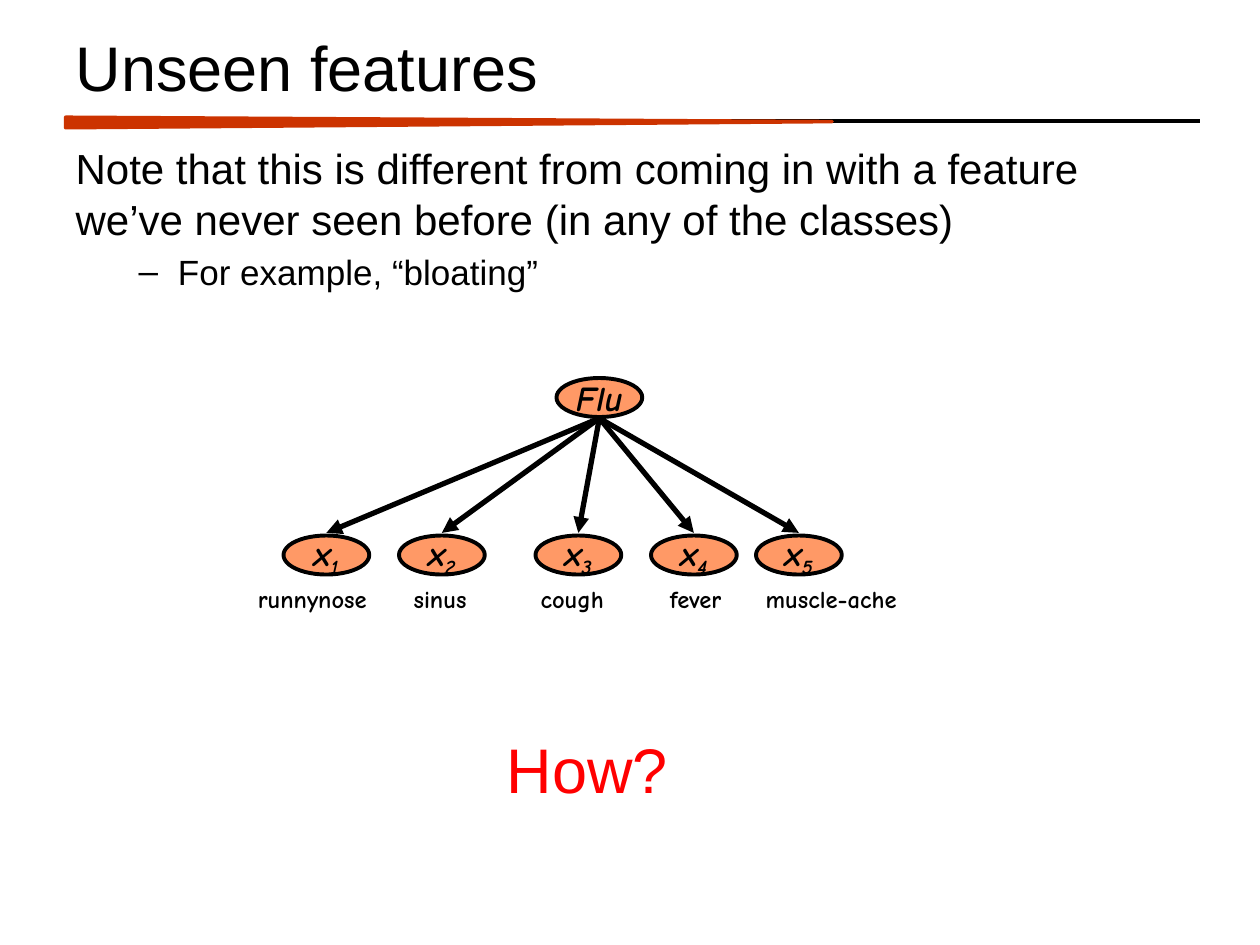
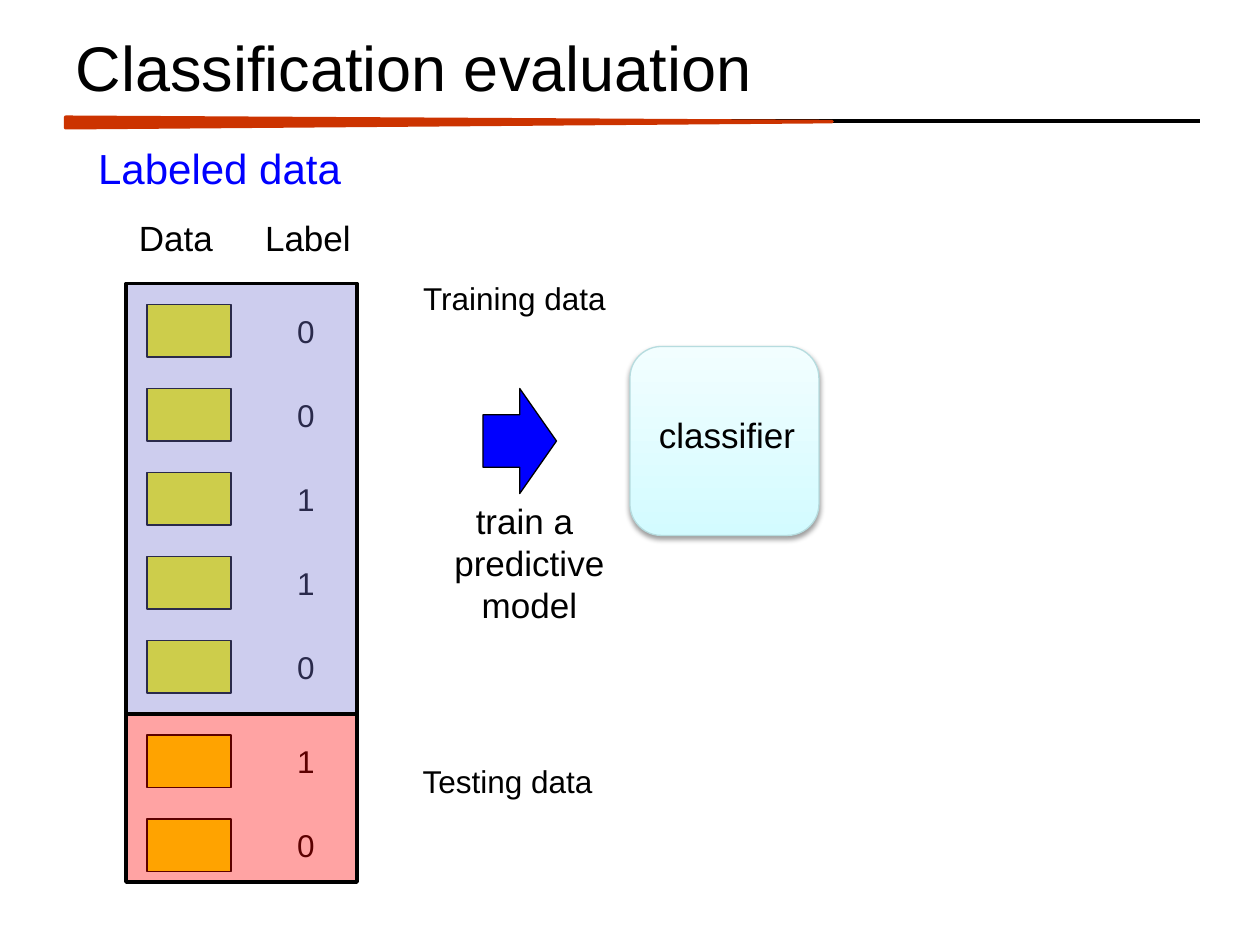
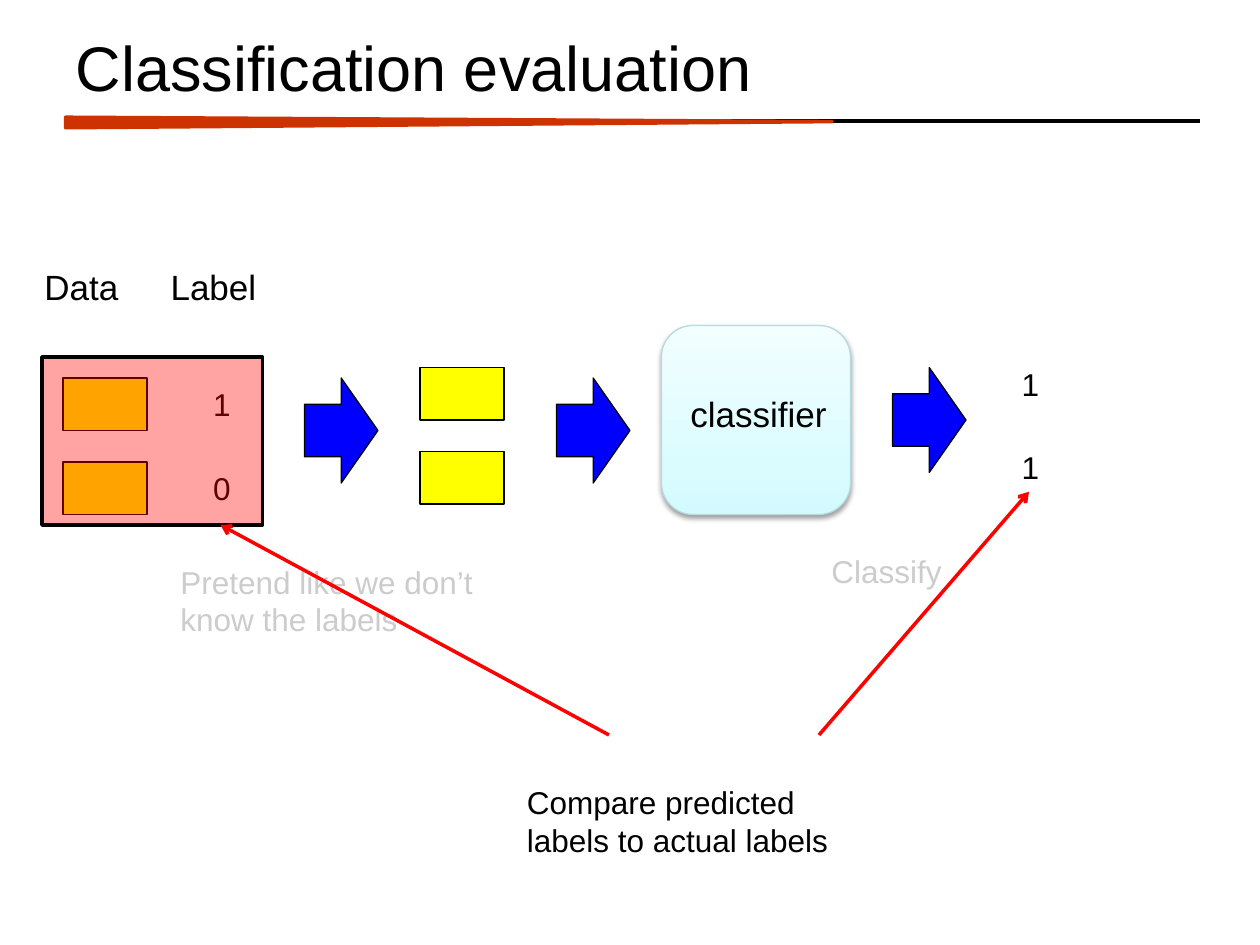
from lxml import etree
from pptx import Presentation
from pptx import util as u
from pptx.dml.color import RGBColor
from pptx.enum import shapes, text
from pptx.oxml.ns import qn

BLACK, RED, BLUE, YELLOW = "000000", "FF0000", "0000FF", "FFFF00"
RUST, ORANGE, LAVENDER, GREY = "CC3300", "FF9966", "7575D1", "CCCCCC"
ROW_STEP = 48
TITLE_AND_BODY, TITLE_ONLY = 1, 5


def rgb(color):
    return RGBColor.from_string(color)


def points(*values):
    return [u.Pt(value) for value in values]


class Deck:
    """Holds the presentation, its style and the slide being drawn."""

    body_font = "Arial"
    graph_font = "Comic Neue"

    def __init__(self):
        self.prs = Presentation()
        self.prs.slide_width, self.prs.slide_height = points(720, 540)
        self.slide = None

    def start(self, heading, layout=TITLE_ONLY):
        """Add a slide with its title and the tapering rule below it."""
        self.slide = self.prs.slides.add_slide(self.prs.slide_layouts[layout])
        self.line((37.5, 69), (685.5, 69), BLACK, 2)
        taper = self.shape("ISOSCELES_TRIANGLE", (253.5, -149, 6, 438), RUST, RUST, 2)
        taper.rotation = 90
        taper.adjustments[0] = 0.417
        title = self.slide.shapes.title
        self.place(title, (36, 12, 648, 52))
        title.text_frame.text = heading
        title.text_frame.vertical_anchor = text.MSO_ANCHOR.MIDDLE
        self.style(title.text_frame.paragraphs[0], 36, align="LEFT")

    def place(self, shape, box):
        shape.left, shape.top, shape.width, shape.height = points(*box)

    def style(self, paragraph, size, color=BLACK, font=body_font, align=None, bold=None, italic=None):
        paragraph.font.size = u.Pt(size)
        paragraph.font.name = font
        paragraph.font.color.rgb = rgb(color)
        paragraph.font.bold, paragraph.font.italic = bold, italic
        if align:
            paragraph.alignment = text.PP_ALIGN[align]

    def body(self, box, statement, example):
        """Fill the body with a plain statement and one dashed example."""
        body = self.slide.placeholders[1]
        self.place(body, box)
        frame = body.text_frame
        frame.auto_size = text.MSO_AUTO_SIZE.NONE
        frame.text = statement
        first, second = frame.paragraphs[0], frame.add_paragraph()
        second.text, second.level = example, 1
        self.style(first, 24)
        self.style(second, 20)
        props = first._p.get_or_add_pPr()
        props.set("marL", "0")
        props.set("indent", "0")
        etree.SubElement(props, qn("a:buNone"))

    def label(self, box, words, size=18, color=BLACK, wrap=False, **font):
        frame = self.slide.shapes.add_textbox(*points(*box)).text_frame
        frame.text = words
        frame.word_wrap = wrap
        for paragraph in frame.paragraphs:
            self.style(paragraph, size, color, align="LEFT" if wrap else "CENTER", **font)

    def shape(self, kind, box, fill, line=BLACK, width=0.75, alpha=None):
        shape = self.slide.shapes.add_shape(shapes.MSO_SHAPE[kind], *points(*box))
        shape.shadow.inherit = False
        shape.fill.solid()
        shape.fill.fore_color.rgb = rgb(fill)
        shape.line.color.rgb = rgb(line)
        shape.line.width = u.Pt(width)
        if alpha:
            tint = shape.element.spPr.find(f"{qn('a:solidFill')}/{qn('a:srgbClr')}")
            etree.SubElement(tint, qn("a:alpha"), val=str(alpha * 1000))
        return shape

    def line(self, start, end, color, width, head=None):
        line = self.slide.shapes.add_connector(
            shapes.MSO_CONNECTOR.STRAIGHT, *points(*start, *end))
        line.line.color.rgb = rgb(color)
        line.line.width = u.Pt(width)
        props = line.element.spPr
        if head:
            etree.SubElement(props.find(qn("a:ln")), qn("a:tailEnd"), type=head)
        etree.SubElement(props, qn("a:effectLst"))

    def node(self, left, top, name, subscript=""):
        node = self.shape("OVAL", (left, top, 49, 22.3), ORANGE, width=2.25)
        frame = node.text_frame
        frame.word_wrap = False
        frame.vertical_anchor = text.MSO_ANCHOR.MIDDLE
        paragraph = frame.paragraphs[0]
        paragraph.add_run().text = name
        if subscript:
            index = paragraph.add_run()
            index.text = subscript
            index._r.get_or_add_rPr().set("baseline", "-25000")
        self.style(paragraph, 20, font=self.graph_font, align="CENTER", bold=True, italic=True)

    def column_heads(self, left, top):
        self.label((left, top, 57, 32), "Data", 20)
        self.label((left + 72, top, 64, 32), "Label", 20)

    def examples(self, left, top, count):
        for row in range(count):
            self.shape("RECTANGLE", (left, top + row * ROW_STEP, 48, 30), YELLOW)

    def digits(self, left, top, values):
        for row, value in enumerate(values):
            self.label((left, top + row * ROW_STEP, 24.5, 29), value)

    def labeled_set(self, panel, tint, labels, pad):
        """Draw examples with their labels under a translucent panel."""
        left, top = panel[:2]
        self.examples(left + 12, top + pad, len(labels))
        self.digits(left + 90.5, top + pad + 0.5, labels)
        self.shape("RECTANGLE", panel, tint, width=2, alpha=36)

    def block_arrow(self, left, top):
        self.shape("RIGHT_ARROW", (left, top, 42, 60), BLUE)

    def classifier(self, left, top):
        block = self.shape("ROUNDED_RECTANGLE", (left, top, 108, 108), "D3FBFF", "B6DCDF")
        block.fill.gradient()
        block.fill.gradient_angle = 90
        for stop, color in zip(block.fill.gradient_stops, ("D3FBFF", "F2FEFF")):
            stop.color.rgb = rgb(color)
            stop.position = 0 if color == "D3FBFF" else 1
        shadow = etree.SubElement(
            block.element.spPr.find(qn("a:effectLst")), qn("a:outerShdw"),
            blurRad=str(u.Pt(3.1)), dist=str(u.Pt(1.6)), dir="5400000", rotWithShape="0")
        shade = etree.SubElement(shadow, qn("a:srgbClr"), val=BLACK)
        etree.SubElement(shade, qn("a:alpha"), val="38000")
        self.label((left + 8.5, top + 34.5, 94, 32), "classifier", 20)


def unseen_features(deck):
    deck.start("Unseen features", TITLE_AND_BODY)
    deck.body((36, 78, 648, 108),
              "Note that this is different from coming in with a feature "
              "we’ve never seen before (in any of the classes)",
              "For example, “bloating”")
    deck.node(318, 216, "Flu")
    symptoms = [  # name, node left, caption left, caption width
        ("runnynose", 162, 138, 81),
        ("sinus", 228, 228, 47),
        ("cough", 306, 301, 52),
        ("fever", 372, 372, 51),
        ("muscle-ache", 432, 426, 98),
    ]
    for number, (symptom, left, caption_left, width) in enumerate(symptoms, 1):
        deck.node(left, 306, "x", str(number))
        deck.line((342.5, 239), (left + 24.5, 304.5), BLACK, 3, "triangle")
        deck.label((caption_left, 330, width, 24), symptom, 14, font=deck.graph_font, bold=True)
    deck.label((282, 414, 107, 51), "How?", 36, RED)


def training(deck):
    deck.start("Classification evaluation")
    deck.label((48, 78, 155, 36), "Labeled data", 24, BLUE)
    deck.column_heads(72, 120)
    deck.labeled_set((72, 162, 132, 246), LAVENDER, "00110", 12)
    deck.labeled_set((72, 408, 132, 96), RED, "10", 12)
    deck.label((234, 156, 120, 29), "Training data")
    deck.label((234, 432, 112, 29), "Testing data")
    deck.block_arrow(276, 222)
    deck.label((252, 282, 101, 80), "train a \npredictive\nmodel", 20)
    deck.classifier(360, 198)


def testing(deck):
    deck.start("Classification evaluation")
    deck.column_heads(18, 148)
    deck.labeled_set((24, 204, 126, 96), RED, "10", 12)
    deck.block_arrow(174, 216)
    deck.label((96, 318, 196, 51), "Pretend like we don’t know the labels", color=GREY, wrap=True)
    deck.examples(240, 210, 2)
    deck.block_arrow(318, 216)
    deck.classifier(378, 186)
    deck.label((468, 312, 84, 29), "Classify", color=GREY, wrap=True)
    deck.block_arrow(510, 210)
    deck.digits(576.5, 204.75, "11")
    deck.line((468, 420), (588, 281), RED, 2, "arrow")
    deck.line((348, 420), (126, 300), RED, 2, "arrow")
    deck.label((294, 444, 196, 51), "Compare predicted labels to actual labels", wrap=True)


def main():
    deck = Deck()
    for draw in (unseen_features, training, testing):
        draw(deck)
    deck.prs.save("out.pptx")


if __name__ == "__main__":
    main()
